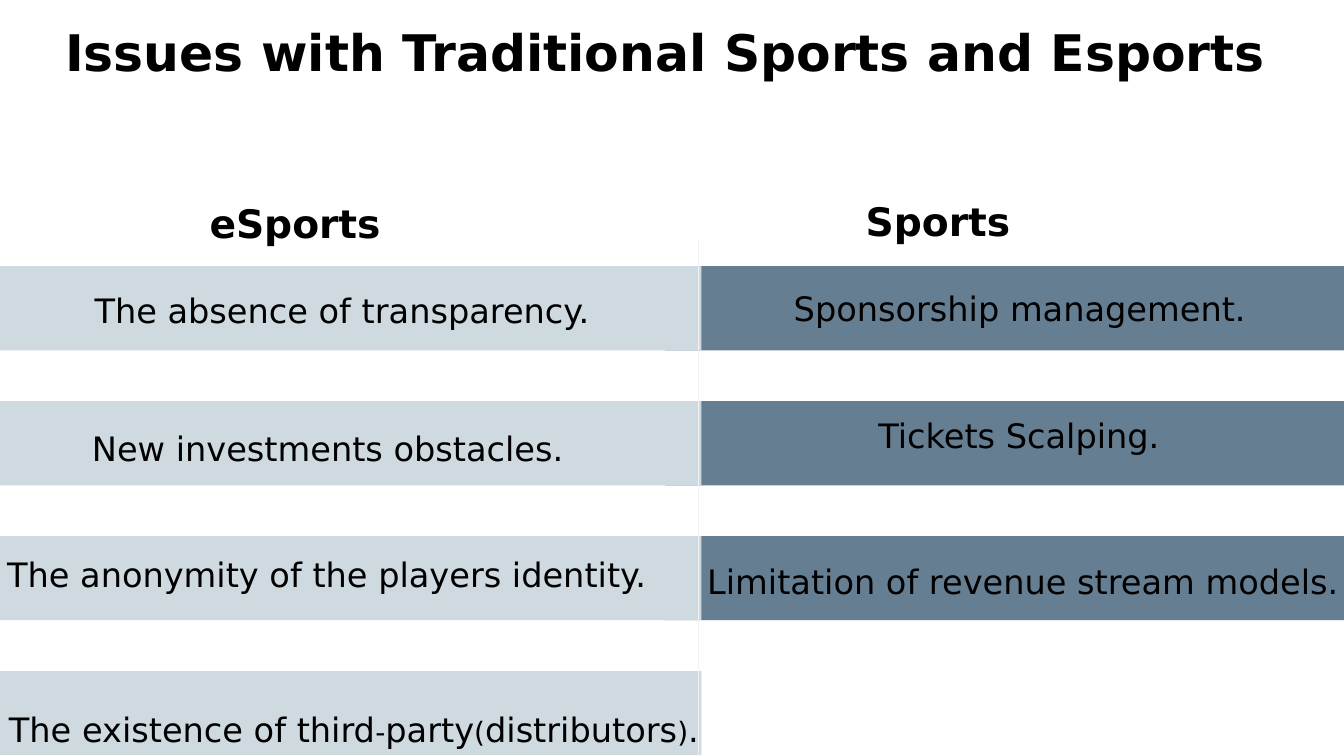
from lxml.etree import SubElement
from pptx import Presentation
from pptx.dml.color import RGBColor
from pptx.enum.shapes import MSO_CONNECTOR as Link, MSO_SHAPE as Preset
from pptx.enum.text import MSO_AUTO_SIZE as Fit, PP_ALIGN as Align
from pptx.oxml.ns import qn
from pptx.util import Cm, Pt


def colour(value):
    return RGBColor.from_string(value)


def write(para, text, size=24, bold=False, font="DejaVu Sans", ink="000000"):
    span = para.add_run()
    span.text = text
    span.font.name = font
    span.font.size = Pt(size)
    span.font.bold = bold
    span.font.color.rgb = colour(ink)


class IssuesSlide:
    """Draws the elements of the two-column issues comparison on one page."""

    sports_fill = "667E92"
    esports_fill = "CFD9E0"
    divider_ink = "F2F2F2"
    first_row, row_step, bar_height = 6.71, 3.4, 2.12

    def __init__(self, page):
        self.page = page

    def bars(self, left, width, count, fill):
        for row in range(count):
            top = self.first_row + row * self.row_step
            bar = self.page.shapes.add_shape(
                Preset.RECTANGLE, Cm(left), Cm(top), Cm(width), Cm(self.bar_height))
            bar.shadow.inherit = False
            bar.fill.solid()
            bar.fill.fore_color.rgb = colour(fill)
            bar.line.fill.background()

    def divider(self, left, top, bottom):
        line = self.page.shapes.add_connector(
            Link.STRAIGHT, Cm(left), Cm(top), Cm(left), Cm(bottom))
        line.line.color.rgb = colour(self.divider_ink)
        line.line.width = Pt(0.75)
        SubElement(line._element.spPr, qn("a:effectLst"))

    def label(self, left, top, width, height, *spans, spacing=None, wrap=True):
        box = self.page.shapes.add_textbox(Cm(left), Cm(top), Cm(width), Cm(height))
        frame = box.text_frame
        frame.word_wrap = wrap
        frame.auto_size = Fit.SHAPE_TO_FIT_TEXT
        para = frame.paragraphs[0]
        para.alignment = Align.CENTER
        para.line_spacing = spacing
        for text, style in spans:
            write(para, text, **style)


def main():
    deck = Presentation()
    deck.slide_width, deck.slide_height = Cm(33.87), Cm(19.05)
    slide = IssuesSlide(deck.slides.add_slide(deck.slide_layouts[6]))
    body, small = {"size": 24}, {"size": 20}
    heading = {"size": 28, "bold": True}

    slide.bars(16.76, 17.11, 3, slide.sports_fill)
    slide.bars(0, 17.68, 4, slide.esports_fill)
    slide.divider(17.6, 6.05, 19.03)

    slide.label(1.19, 0.41, 31.6, 1.8,
                ("Issues with Traditional Sports and Esports ", {"size": 36, "bold": True}),
                wrap=False)

    slide.label(4.55, 4.9, 5.77, 1.45, ("eSports", heading))
    slide.label(0.25, 7.19, 16.74, 1.27, ("The absence of transparency.", body))
    slide.label(1.17, 10.16, 14.45, 1.63, ("New investments obstacles. ", body), spacing=1.5)
    slide.label(-0.2, 13.84, 16.87, 1.27, ("The anonymity of the players identity.", body))
    slide.label(-0.58, 17.73, 19, 1.27,
                ("The existence of third", body), ("-", small), ("party", body),
                ("(", small), ("distributors", body), (")", small), (".", body))

    slide.label(20.7, 4.85, 5.87, 1.45, ("Sports", heading))
    slide.label(18.14, 7.14, 14.83, 1.27,
                (" ", {"bold": True}), ("Sponsorship management.", body))
    slide.label(20.93, 10.34, 9.5, 1.27, ("Tickets Scalping.", body))
    slide.label(17.12, 13.51, 17.32, 1.6,
                ("Limitation of revenue stream models.", body), spacing=1.5)

    deck.save("out.pptx")


if __name__ == "__main__":
    main()
